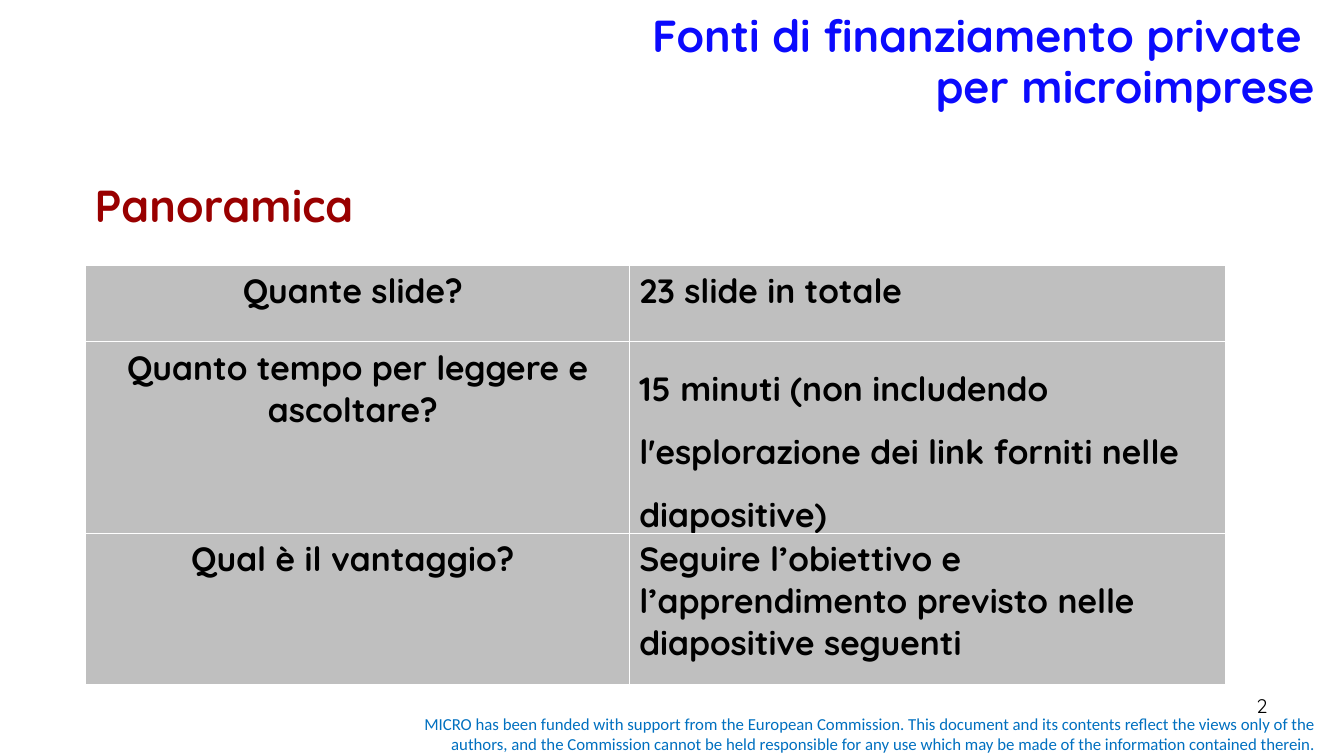
from dataclasses import dataclass

from lxml.etree import SubElement
from pptx import Presentation
from pptx.dml.color import RGBColor
from pptx.enum.text import MSO_ANCHOR, MSO_AUTO_SIZE, PP_ALIGN
from pptx.oxml.ns import qn
from pptx.util import Inches, Pt


@dataclass(frozen=True)
class Theme:
    """Colours, fonts and type sizes of the deck."""
    title: str = "0B0AFD"
    heading: str = "990000"
    body: str = "000000"
    footer: str = "0070C0"
    cell: str = "BFBFBF"
    border: str = "FFFFFF"
    font: str = "Quicksand"
    footer_font: str = "Calibri"
    big: int = 32
    medium: int = 24
    small: int = 14
    tiny: int = 12


def write(tf, text, size, color, font, bold=False, align=PP_ALIGN.LEFT,
          anchor=MSO_ANCHOR.TOP, spacing=None):
    """Fill a text frame with one formatted paragraph."""
    tf.word_wrap = True
    tf.vertical_anchor = anchor
    p = tf.paragraphs[0]
    p.alignment = align
    p.line_spacing = spacing
    for i, line in enumerate(text.split("\n")):
        if i:
            p.add_line_break()
        r = p.add_run()
        r.text = line
        r.font.name = font
        r.font.size = Pt(size)
        r.font.bold = bold
        r.font.color.rgb = RGBColor.from_string(color)


class SlideBuilder:
    """Place styled elements on a slide by percentages of its size."""

    def __init__(self, prs, theme):
        """Add a title-only slide."""
        self.prs = prs
        self.theme = theme
        self.s = prs.slides.add_slide(prs.slide_layouts[5])

    def x(self, share):
        """Convert a percentage of the slide width."""
        return round(self.prs.slide_width * share / 100)

    def y(self, share):
        """Convert a percentage of the slide height."""
        return round(self.prs.slide_height * share / 100)

    def box(self, left, top, width, height):
        """Convert a box given in percentages."""
        return self.x(left), self.y(top), self.x(width), self.y(height)

    def title(self, text, area):
        """Move and fill the title placeholder."""
        sp = self.s.shapes.title
        sp.left, sp.top, sp.width, sp.height = self.box(*area)
        sp.text_frame.auto_size = MSO_AUTO_SIZE.NONE
        write(sp.text_frame, text, self.theme.big, self.theme.title,
              self.theme.font, bold=True, align=PP_ALIGN.RIGHT,
              anchor=MSO_ANCHOR.MIDDLE, spacing=0.95)

    def text(self, text, area, size, color, font=None, **fmt):
        """Add a text box."""
        sp = self.s.shapes.add_textbox(*self.box(*area))
        write(sp.text_frame, text, size, color, font or self.theme.font, **fmt)

    def table(self, rows, left, top, widths, heights):
        """Add a bordered table of questions and answers."""
        area = self.box(left, top, sum(widths), sum(heights))
        tbl = self.s.shapes.add_table(len(rows), len(widths), *area).table
        for col, width in zip(tbl.columns, widths):
            col.width = self.x(width)
        for row, height, content in zip(tbl.rows, heights, rows):
            row.height = self.y(height)
            question, answer, spacing = content
            self.cell(row.cells[0], question, align=PP_ALIGN.CENTER)
            self.cell(row.cells[1], answer, spacing=spacing)

    def cell(self, cell, text, **fmt):
        """Fill, border and write one table cell."""
        write(cell.text_frame, text, self.theme.medium, self.theme.body,
              self.theme.font, bold=True, **fmt)
        tc_pr = cell._tc.get_or_add_tcPr()
        for side in ("a:lnL", "a:lnR", "a:lnT", "a:lnB"):
            ln = SubElement(tc_pr, qn(side), w=str(Pt(1)))
            fill = SubElement(ln, qn("a:solidFill"))
            SubElement(fill, qn("a:srgbClr"), val=self.theme.border)
        cell.fill.solid()
        cell.fill.fore_color.rgb = RGBColor.from_string(self.theme.cell)


def main():
    """Build and save the overview slide."""
    prs = Presentation()
    prs.slide_width, prs.slide_height = Inches(13.33), Inches(7.5)
    theme = Theme()
    b = SlideBuilder(prs, theme)
    b.title("Fonti di finanziamento private \nper microimprese",
            (8.55, 0, 90.02, 16.67))
    b.text("MICRO has been funded with support from the European Commission. "
           "This document and its contents reflect the views only of the "
           "authors, and the Commission cannot be held responsible for any use "
           "which may be made of the information contained therein.",
           (28.13, 93.73, 70.52, 6.67), theme.tiny, theme.footer,
           theme.footer_font, align=PP_ALIGN.RIGHT, anchor=MSO_ANCHOR.MIDDLE)
    b.table([
        ("Quante slide? ", "23 slide in totale", None),
        ("Quanto tempo per leggere e ascoltare? ",
         "15 minuti (non includendo l'esplorazione dei link forniti nelle "
         "diapositive)", 1.5),
        ("Qual è il vantaggio? ",
         "Seguire l’obiettivo e l’apprendimento previsto nelle diapositive "
         "seguenti", None),
    ], 6.38, 35.07, (40.44, 44.34), (10.13, 25.33, 20))
    b.text("2", (71.72, 91.07, 23.33, 6.93), theme.small, theme.body,
           align=PP_ALIGN.RIGHT)
    b.text("Panoramica", (6.3, 22.8, 21.76, 8.53), theme.big, theme.heading,
           bold=True)
    prs.save("out.pptx")


if __name__ == "__main__":
    main()
